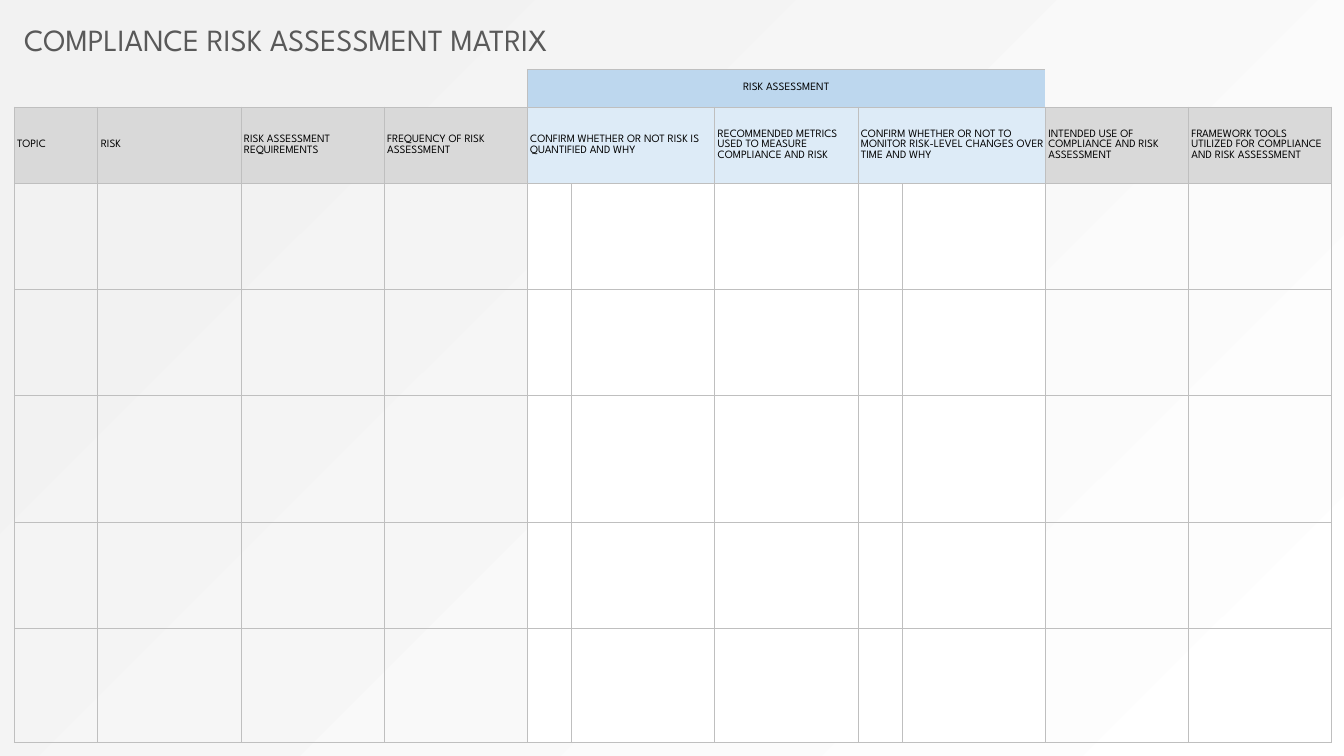
from dataclasses import dataclass

from lxml.etree import fromstring
from pptx import Presentation
from pptx.dml.color import RGBColor
from pptx.enum.text import MSO_ANCHOR, PP_ALIGN
from pptx.util import Inches, Pt


@dataclass(frozen=True)
class Theme:
    font: str = "League Spartan"
    title_size: int = 22
    table_size: int = 8
    title: str = "595959"
    text: str = "000000"
    white: str = "FFFFFF"
    backdrop: str = "F2F2F2"
    border: str = "BFBFBF"
    gray: str = "D9D9D9"
    blue: str = "BDD7EE"
    pale_blue: str = "DDEBF7"


theme = Theme()
NAMESPACE = "http://schemas.openxmlformats.org/drawingml/2006/main"

COLUMN_WIDTHS = [0.83] + [1.42] * 3 + [0.44, 1.42, 1.42, 0.44] + [1.42] * 3
ROW_HEIGHTS = [0.37, 0.76, 1.05, 1.05, 1.26, 1.05, 1.13]
ASSESSMENT = range(4, 9)  # columns under the "RISK ASSESSMENT" band
HEADINGS = {
    0: "TOPIC",
    1: "RISK",
    2: "RISK ASSESSMENT REQUIREMENTS",
    3: "FREQUENCY OF RISK ASSESSMENT",
    4: "CONFIRM WHETHER OR NOT RISK IS QUANTIFIED AND WHY",
    6: "RECOMMENDED METRICS USED TO MEASURE COMPLIANCE AND RISK",
    7: "CONFIRM WHETHER OR NOT TO MONITOR RISK-LEVEL CHANGES OVER TIME AND WHY",
    9: "INTENDED USE OF COMPLIANCE AND RISK ASSESSMENT",
    10: "FRAMEWORK TOOLS UTILIZED FOR COMPLIANCE AND RISK ASSESSMENT",
}


def set_borders(cell, widths):
    """Draw the sides named in widths (L, R, T, B, in points); clear the others."""
    properties = cell._tc.get_or_add_tcPr()
    for index, side in enumerate("LRTB"):
        width = widths.get(side, 0)
        paint = (f'<a:solidFill><a:srgbClr val="{theme.border}"/></a:solidFill>'
                 if width else "<a:noFill/>")
        properties.insert(index, fromstring(
            f'<a:ln{side} xmlns:a="{NAMESPACE}" w="{Pt(width)}">{paint}</a:ln{side}>'))


def style_paragraph(paragraph, size, color):
    paragraph.font.name = theme.font
    paragraph.font.size = Pt(size)
    paragraph.font.bold = False
    paragraph.font.color.rgb = RGBColor.from_string(color)


presentation = Presentation()
presentation.slide_width = Inches(13.33)
presentation.slide_height = Inches(7.5)
slide = presentation.slides.add_slide(presentation.slide_layouts[6])

# Background: white at lower right to light gray at upper left
background = slide.background.fill
background.gradient()
background.gradient_angle = 135
for stop, color, position in zip(background.gradient_stops,
                                 (theme.white, theme.backdrop), (0, 0.87)):
    stop.color.rgb = RGBColor.from_string(color)
    stop.position = position

# Title
title = slide.shapes.add_textbox(Inches(0.14), Inches(0.16), Inches(6.03), Inches(0.47))
title.text_frame.word_wrap = False
title.text_frame.text = "COMPLIANCE RISK ASSESSMENT MATRIX"
style_paragraph(title.text_frame.paragraphs[0], theme.title_size, theme.title)

# Matrix grid
table = slide.shapes.add_table(
    len(ROW_HEIGHTS), len(COLUMN_WIDTHS), Inches(0.14), Inches(0.69),
    Inches(sum(COLUMN_WIDTHS)), Inches(sum(ROW_HEIGHTS))).table
table.first_row = False
table.horz_banding = False
for column, width in zip(table.columns, COLUMN_WIDTHS):
    column.width = Inches(width)
for row, height in zip(table.rows, ROW_HEIGHTS):
    row.height = Inches(height)

# Wording
table.cell(0, ASSESSMENT[0]).text = "RISK ASSESSMENT"
for column_index, heading in HEADINGS.items():
    table.cell(1, column_index).text = heading

# Fills, borders and type
for row_index, row in enumerate(table.rows):
    for column_index, cell in enumerate(row.cells):
        assessed = column_index in ASSESSMENT
        if row_index == 0:
            fill = theme.blue if assessed else None
            borders = {"B": 0.5}
            if assessed:
                borders["T"] = 1
            if column_index == ASSESSMENT[0]:
                borders["L"] = 0.5
            if column_index == ASSESSMENT[0] - 1:
                borders["R"] = 0.5
        else:
            borders = dict.fromkeys("LRTB", 0.5)
            if row_index == 1:
                fill = theme.pale_blue if assessed else theme.gray
            else:
                fill = theme.white if assessed else None

        if fill:
            cell.fill.solid()
            cell.fill.fore_color.rgb = RGBColor.from_string(fill)
        else:
            cell.fill.background()
        set_borders(cell, borders)

        cell.margin_left = Inches(0.03 if row_index else 0)
        cell.margin_right = cell.margin_top = cell.margin_bottom = 0
        cell.vertical_anchor = MSO_ANCHOR.MIDDLE
        paragraph = cell.text_frame.paragraphs[0]
        paragraph.alignment = PP_ALIGN.LEFT if row_index else PP_ALIGN.CENTER
        style_paragraph(paragraph, theme.table_size, theme.text)

# Merged headings
for row_index, first, last in [(0, ASSESSMENT[0], ASSESSMENT[-1]), (1, 4, 5), (1, 7, 8)]:
    table.cell(row_index, first).merge(table.cell(row_index, last))

presentation.save("out.pptx")
